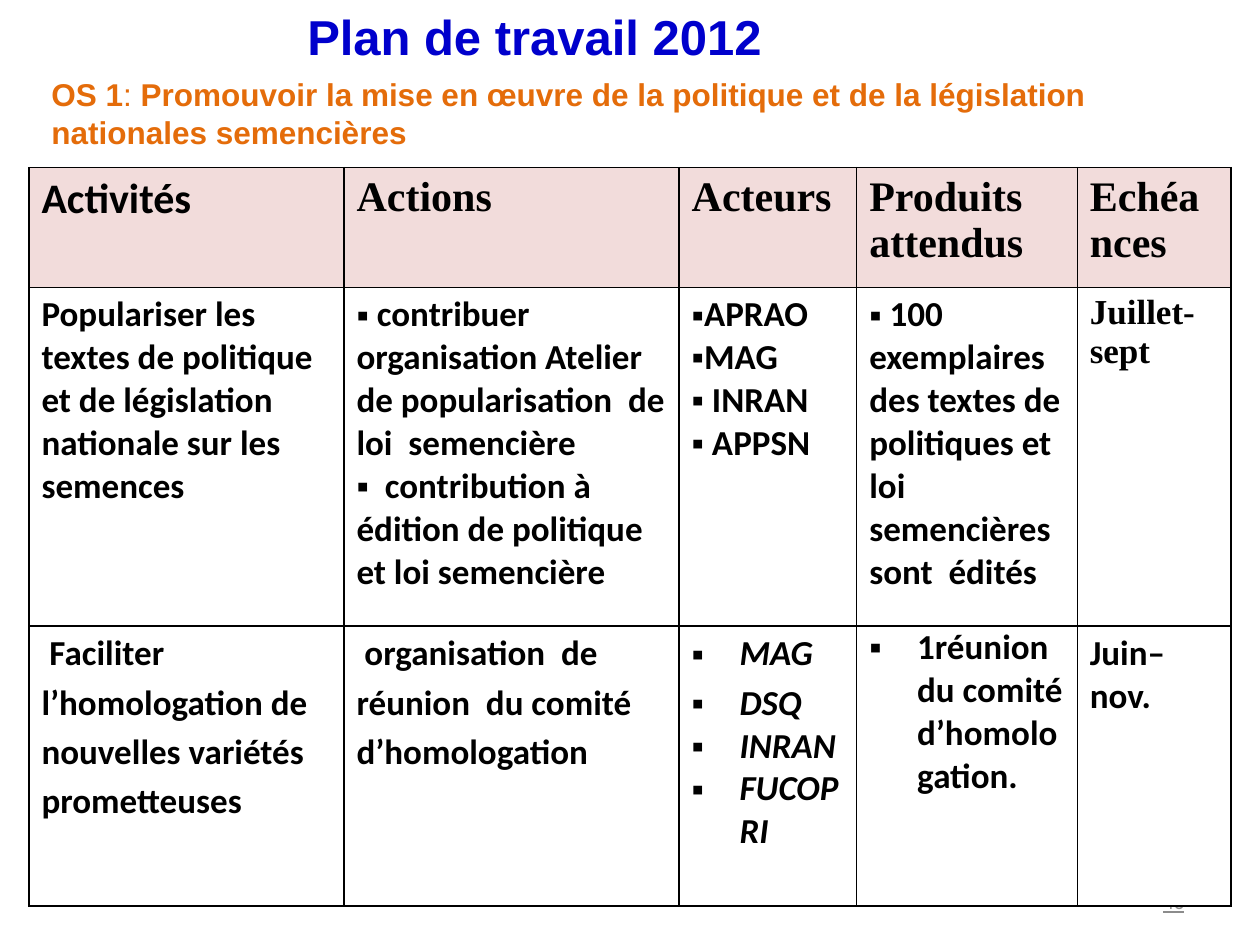
from dataclasses import dataclass

from lxml import etree
from pptx import Presentation
from pptx import util as u
from pptx.dml.color import RGBColor
from pptx.enum import shapes, text
from pptx.oxml.ns import qn

WIDTH, HEIGHT = 10, 7.5
COLORS = {
    "title": "0000CC",
    "goal": "E46C0A",
    "header": "F2DCDB",
    "paper": "FFFFFF",
    "ink": "000000",
    "number": "8C8C8C",
}
SANS, SERIF, HEADING = "Calibri", "Times New Roman", "Arial"
COLUMNS = [2.5, 2.66, 1.41, 1.75, 1.22]
ROWS = [0.95, 2.69, 2.22]
HANGING = 0.38
LOOSE = 1.15


@dataclass
class Line:
    """One paragraph of a table cell."""
    words: str
    font: str = SANS
    size: int = 20
    italic: bool = False
    bullet: bool = False
    hanging: float = 0
    spacing: float = 1


def header(words, font=SERIF):
    return [Line(words, font, 24)]


def bullets(*items, **style):
    return [Line(item, bullet=True, **style) for item in items]


CONTENT = [
    [
        header("Activités", SANS),
        header("Actions"),
        header("Acteurs"),
        header("Produits attendus"),
        header("Echéances"),
    ],
    [
        [Line("Populariser les textes de politique et de législation nationale sur les semences")],
        bullets(" contribuer organisation Atelier de popularisation  de loi  semencière",
                "  contribution à édition de politique et loi semencière"),
        bullets("APRAO", "MAG", " INRAN", " APPSN"),
        bullets(" 100 exemplaires  des textes de politiques et loi semencières sont  édités"),
        [Line("Juillet-sept", SERIF)],
    ],
    [
        [Line(" Faciliter l’homologation de nouvelles variétés prometteuses", spacing=LOOSE)],
        [Line(" organisation  de réunion  du comité d’homologation", spacing=LOOSE)],
        bullets("MAG", "DSQ", italic=True, hanging=HANGING, spacing=LOOSE)
        + bullets("INRAN", "FUCOPRI", italic=True, hanging=HANGING),
        bullets("1réunion  du comité d’homologation.", hanging=HANGING),
        [Line("Juin–nov.")],
    ],
]


def color(name):
    return RGBColor.from_string(COLORS[name])


def box(left, top, width, height):
    """Turn shares of the slide into lengths."""
    return (u.Inches(left * WIDTH), u.Inches(top * HEIGHT),
            u.Inches(width * WIDTH), u.Inches(height * HEIGHT))


def add_run(paragraph, words, font, size, ink, bold=True, italic=False, underline=False):
    run = paragraph.add_run()
    run.text = words
    run.font.name = font
    run.font.size = u.Pt(size)
    run.font.bold = bold
    run.font.italic = italic
    if underline:
        run.font.underline = True
    run.font.color.rgb = color(ink)


def add_bullet(paragraph, hanging):
    properties = paragraph._p.get_or_add_pPr()
    indent = u.Inches(hanging)
    properties.set("marL", str(indent))
    properties.set("indent", str(-indent))
    etree.SubElement(properties, qn("a:buFont")).set("typeface", HEADING)
    etree.SubElement(properties, qn("a:buChar")).set("char", "▪")


def add_borders(cell):
    properties = cell._tc.get_or_add_tcPr()
    for side in ("lnL", "lnR", "lnT", "lnB"):
        border = etree.SubElement(properties, qn(f"a:{side}"), w=str(u.Pt(1)))
        fill = etree.SubElement(border, qn("a:solidFill"))
        etree.SubElement(fill, qn("a:srgbClr"), val=COLORS["ink"])


def fill_cell(cell, lines, background, flush):
    """Write a cell; a flush cell has no space above and below its text."""
    add_borders(cell)
    cell.fill.solid()
    cell.fill.fore_color.rgb = color(background)
    cell.margin_left = cell.margin_right = u.Inches(0.1)
    cell.margin_top = cell.margin_bottom = u.Inches(0 if flush else 0.05)
    frame = cell.text_frame
    for index, line in enumerate(lines):
        paragraph = frame.add_paragraph() if index else frame.paragraphs[0]
        paragraph.line_spacing = line.spacing
        if line.bullet:
            add_bullet(paragraph, line.hanging)
        add_run(paragraph, line.words, line.font, line.size, "ink", italic=line.italic)


def add_plan(slide):
    left, top = u.Inches(0.23), u.Inches(1.33)
    frame = slide.shapes.add_table(len(ROWS), len(COLUMNS), left, top,
                                   u.Inches(sum(COLUMNS)), u.Inches(sum(ROWS)))
    table = frame.table
    for column, width in zip(table.columns, COLUMNS):
        column.width = u.Inches(width)
    for row, height in zip(table.rows, ROWS):
        row.height = u.Inches(height)
    last_row, last_column = len(ROWS) - 1, len(COLUMNS) - 1
    for r, cells in enumerate(CONTENT):
        for c, lines in enumerate(cells):
            flush = r == last_row and c < last_column
            fill_cell(table.cell(r, c), lines, "paper" if r else "header", flush)


def add_page_number(slide):
    frame = slide.shapes.add_textbox(*box(0.717, 0.927, 0.233, 0.053)).text_frame
    frame.word_wrap = True
    frame.vertical_anchor = text.MSO_ANCHOR.MIDDLE
    paragraph = frame.paragraphs[0]
    paragraph.alignment = text.PP_ALIGN.RIGHT
    add_run(paragraph, "46", SANS, 12, "number", bold=False, underline=True)


def add_title(slide):
    frame = slide.shapes.add_textbox(*box(0.234, 0, 0.385, 0.076)).text_frame
    frame.word_wrap = False
    frame.auto_size = text.MSO_AUTO_SIZE.SHAPE_TO_FIT_TEXT
    add_run(frame.paragraphs[0], "Plan de travail 2012", HEADING, 28, "title")


def add_goal(slide):
    shape = slide.shapes.add_shape(shapes.MSO_SHAPE.RECTANGLE,
                                   *box(0.031, 0.073, 0.938, 0.095))
    shape.shadow.inherit = False
    shape.fill.solid()
    shape.fill.fore_color.rgb = color("paper")
    shape.line.fill.background()
    frame = shape.text_frame
    frame.word_wrap = True
    frame.auto_size = text.MSO_AUTO_SIZE.SHAPE_TO_FIT_TEXT
    frame.vertical_anchor = text.MSO_ANCHOR.TOP
    paragraph = frame.paragraphs[0]
    paragraph.alignment = text.PP_ALIGN.LEFT
    goal = "Promouvoir la mise en œuvre de la politique et de la législation nationales semencières"
    for words, bold in (("OS 1", True), (": ", False), (goal, True)):
        add_run(paragraph, words, HEADING, 18, "goal", bold)


def main():
    presentation = Presentation()
    presentation.slide_width = u.Inches(WIDTH)
    presentation.slide_height = u.Inches(HEIGHT)
    slide = presentation.slides.add_slide(presentation.slide_layouts[6])
    add_page_number(slide)
    add_plan(slide)
    add_title(slide)
    add_goal(slide)
    presentation.save("out.pptx")


if __name__ == "__main__":
    main()
